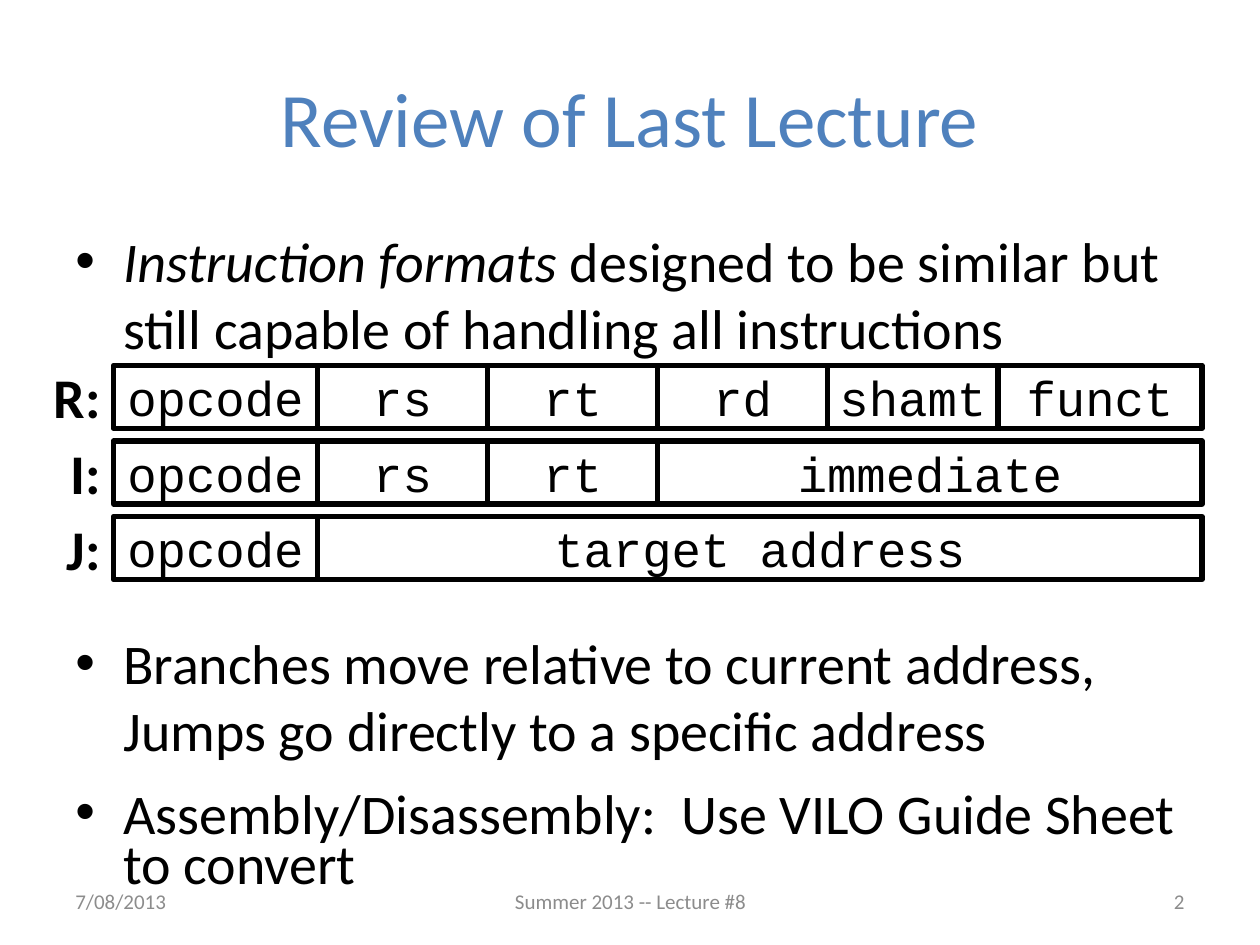
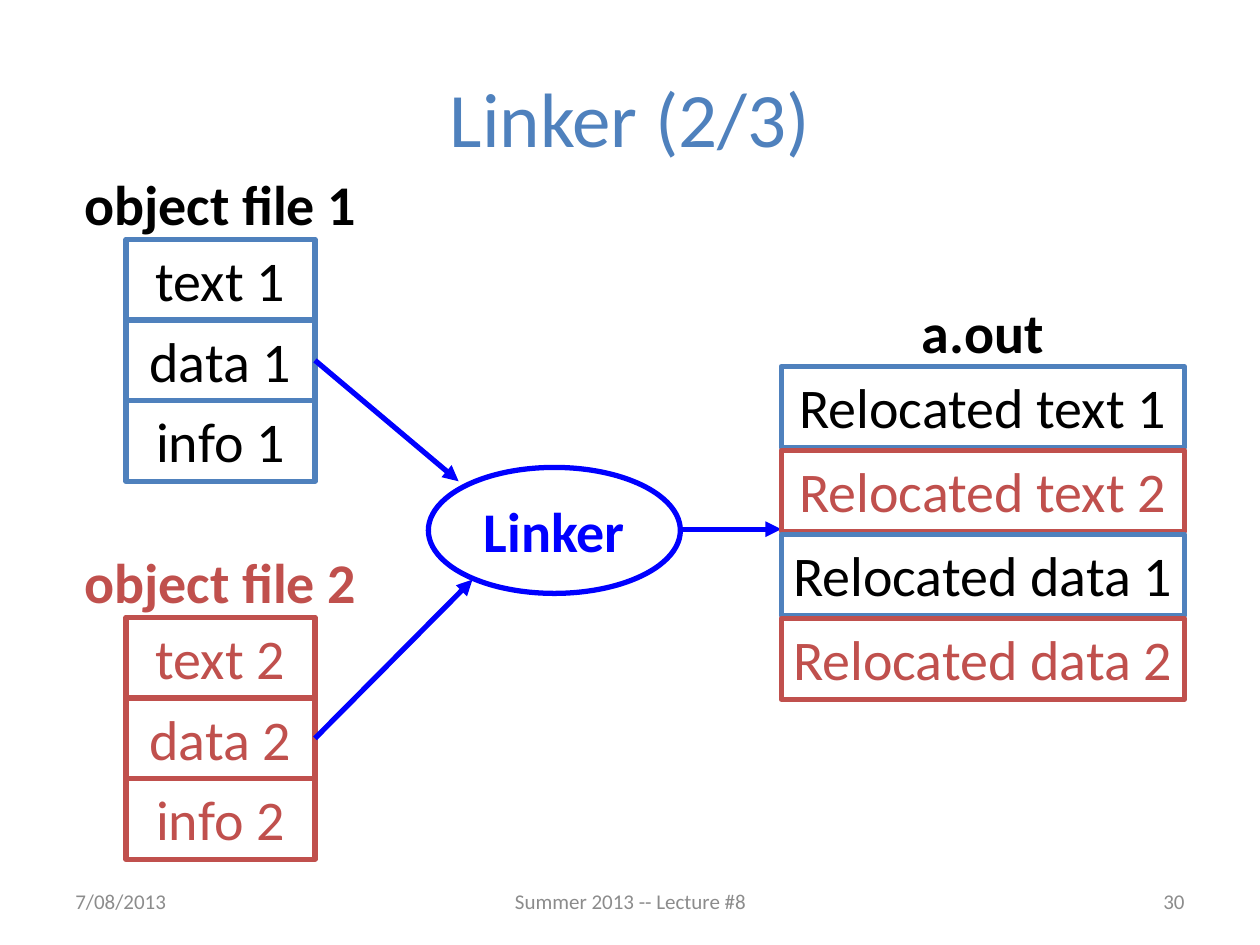
import dataclasses
import pptx
import pptx.util
import pptx.dml.color
import pptx.enum.shapes
import pptx.enum.text
import pptx.oxml

Inches, Pt = pptx.util.Inches, pptx.util.Pt
SHAPE = pptx.enum.shapes.MSO_SHAPE
ALIGN = pptx.enum.text.PP_ALIGN
ANCHOR = pptx.enum.text.MSO_ANCHOR
NS = 'xmlns:a="http://schemas.openxmlformats.org/drawingml/2006/main"'


@dataclasses.dataclass(frozen=True)
class Theme:
    sans: str = "Calibri"
    mono: str = "Courier New"
    black: str = "000000"
    blue: str = "4F81BD"
    red: str = "C0504D"
    link: str = "0000FF"
    gray: str = "8C8C8C"
    title: int = 44
    body: int = 32
    field: int = 28
    footer: int = 12
    line: int = 3


T = Theme()


# Shared helpers
def rgb(color):
    return pptx.dml.color.RGBColor.from_string(color)


def apply(target, formats):
    for name, value in formats.items():
        setattr(target, name, value)


def add_run(p, text, color=T.black, **font):
    r = p.add_run()
    r.text = text
    apply(r.font, {"name": T.sans, "size": Pt(T.body), **font})
    r.font.color.rgb = rgb(color)


def write(sp, text, color=T.black, align=ALIGN.CENTER, frame=None, **font):
    tf = sp.text_frame
    apply(tf, {"vertical_anchor": ANCHOR.MIDDLE, "word_wrap": True, **(frame or {})})
    p = tf.paragraphs[0]
    p.alignment = align
    add_run(p, text, color, **font)


def add_text(s, box, text, **formats):
    write(s.shapes.add_textbox(*map(Inches, box)), text, **formats)


def add_outline(s, kind, box, line, text, **formats):
    sp = s.shapes.add_shape(kind, *map(Inches, box))
    sp.shadow.inherit = False
    sp.fill.background()
    sp.line.color.rgb = rgb(line)
    sp.line.width = Pt(T.line)
    write(sp, text, **formats)


def add_arrow(s, start, end):
    c = s.shapes.add_connector(pptx.enum.shapes.MSO_CONNECTOR.STRAIGHT,
                               *map(Inches, start + end))
    c.line.color.rgb = rgb(T.link)
    c.line.width = Pt(T.line)
    c.line._get_or_add_ln().append(
        pptx.oxml.parse_xml(f'<a:tailEnd {NS} type="triangle"/>'))
    c._element.spPr.append(pptx.oxml.parse_xml(f"<a:effectLst {NS}/>"))


def add_slide(prs, title, number):
    s = prs.slides.add_slide(prs.slide_layouts[5])
    sp = s.shapes.title
    apply(sp, dict(zip(("left", "top", "width", "height"),
                       map(Inches, (0.5, 0.3, 9, 1.25)))))
    write(sp, title, T.blue, size=Pt(T.title))
    # Footer: date, lecture, slide number
    for left, width, text, align in (
            (0.5, 2.33, "7/08/2013", ALIGN.LEFT),
            (3.42, 3.17, "Summer 2013 -- Lecture #8", ALIGN.CENTER),
            (7.17, 2.33, str(number), ALIGN.RIGHT)):
        add_text(s, (left, 6.95, width, 0.4), text, color=T.gray, align=align,
                 size=Pt(T.footer))
    return s


# Review slide
def add_bullets(s, box, bullets):
    tf = s.shapes.add_textbox(*map(Inches, box)).text_frame
    tf.word_wrap = True
    for i, (lines, spacing) in enumerate(bullets):
        p = tf.add_paragraph() if i else tf.paragraphs[0]
        apply(p, spacing)
        pPr = p._p.get_or_add_pPr()
        pPr.set("marL", str(Inches(0.38)))
        pPr.set("indent", str(Inches(-0.38)))
        pPr.append(pptx.oxml.parse_xml(f'<a:buFont {NS} typeface="Arial"/>'))
        pPr.append(pptx.oxml.parse_xml(f'<a:buChar {NS} char="•"/>'))
        for j, runs in enumerate(lines):
            if j:
                p.add_line_break()
            for text, italic in runs:
                add_run(p, text, italic=italic)


def add_formats(s, left, top, formats):
    bit, height, pitch = 0.27, 0.5, 0.6
    for row, (label, fields) in enumerate(formats):
        y = top + row * pitch
        add_text(s, (left - 0.6, y - 0.02, 0.6, 0.54), label, align=ALIGN.RIGHT,
                 frame={"vertical_anchor": ANCHOR.TOP, "margin_top": 0,
                        "margin_bottom": 0}, bold=True)
        x = left
        for name, bits in fields:
            add_outline(s, SHAPE.RECTANGLE, (x, y, bits * bit, height), T.black, name,
                        frame={"margin_left": 0, "margin_right": 0},
                        name=T.mono, size=Pt(T.field))
            x += bits * bit


def build_review(prs):
    s = add_slide(prs, "Review of Last Lecture", 2)
    add_bullets(s, (0.5, 1.75, 9, 5.4), [
        ([[("Instruction formats", True),
           (" designed to be similar but still capable of handling all instructions",
            False)]], {}),
        ([[("Branches move relative to current address, ", False)],
          [("Jumps go directly to a specific address", False)]],
         {"space_before": Pt(152.5)}),
        ([[("Assembly/Disassembly:  Use VILO Guide Sheet to convert", False)]],
         {"space_before": Pt(18), "line_spacing": 0.75}),
    ])
    opcode, rs, rt = ("opcode", 6), ("rs", 5), ("rt", 5)
    add_formats(s, 0.9, 2.9, [
        ("R:", [opcode, rs, rt, ("rd", 5), ("shamt", 5), ("funct", 6)]),
        ("I:", [opcode, rs, rt, ("immediate", 16)]),
        ("J:", [opcode, ("target address", 26)]),
    ])


# Linker slide
def add_file(s, left, top, width, pitch, label, color, sections):
    """Stack the sections of a file under its label."""
    label_width = max(width, 2.5)
    add_text(s, (left + (width - label_width) / 2, top - 0.6, label_width, 0.64),
             label, color=color,
             frame={"word_wrap": False, "vertical_anchor": ANCHOR.TOP}, bold=True)
    for i, (name, line, text_color) in enumerate(sections):
        add_outline(s, SHAPE.RECTANGLE, (left, top + i * pitch, width, 0.64), line,
                    name, color=text_color,
                    frame={"word_wrap": False, "vertical_anchor": ANCHOR.TOP})


def build_linker(prs):
    s = add_slide(prs, "Linker (2/3)", 30)
    sources = ((1, T.blue, T.black), (2, T.red, T.red))
    # Object files
    for n, line, color in sources:
        add_file(s, 1, 1.9 + 3 * (n - 1), 1.5, 0.64, f"object file {n}", color,
                 [(f"{part} {n}", line, color) for part in ("text", "data", "info")])
    # Linker and its arrows
    add_outline(s, SHAPE.OVAL, (3.4, 3.71, 2, 1), T.link, "Linker", color=T.link,
                frame={"word_wrap": False}, bold=True)
    for start, end in (((2.5, 2.86), (3.64, 3.82)),
                       ((2.5, 5.86), (3.75, 4.6)),
                       ((5.4, 4.2), (6.2, 4.2))):
        add_arrow(s, start, end)
    # Executable
    add_file(s, 6.2, 2.91, 3.2, 2 / 3, "a.out", T.black,
             [(f"Relocated {part} {n}", line, color)
              for part in ("text", "data") for n, line, color in sources])


def main():
    prs = pptx.Presentation()
    prs.slide_width, prs.slide_height = Inches(10), Inches(7.5)
    build_review(prs)
    build_linker(prs)
    prs.save("out.pptx")


if __name__ == "__main__":
    main()
